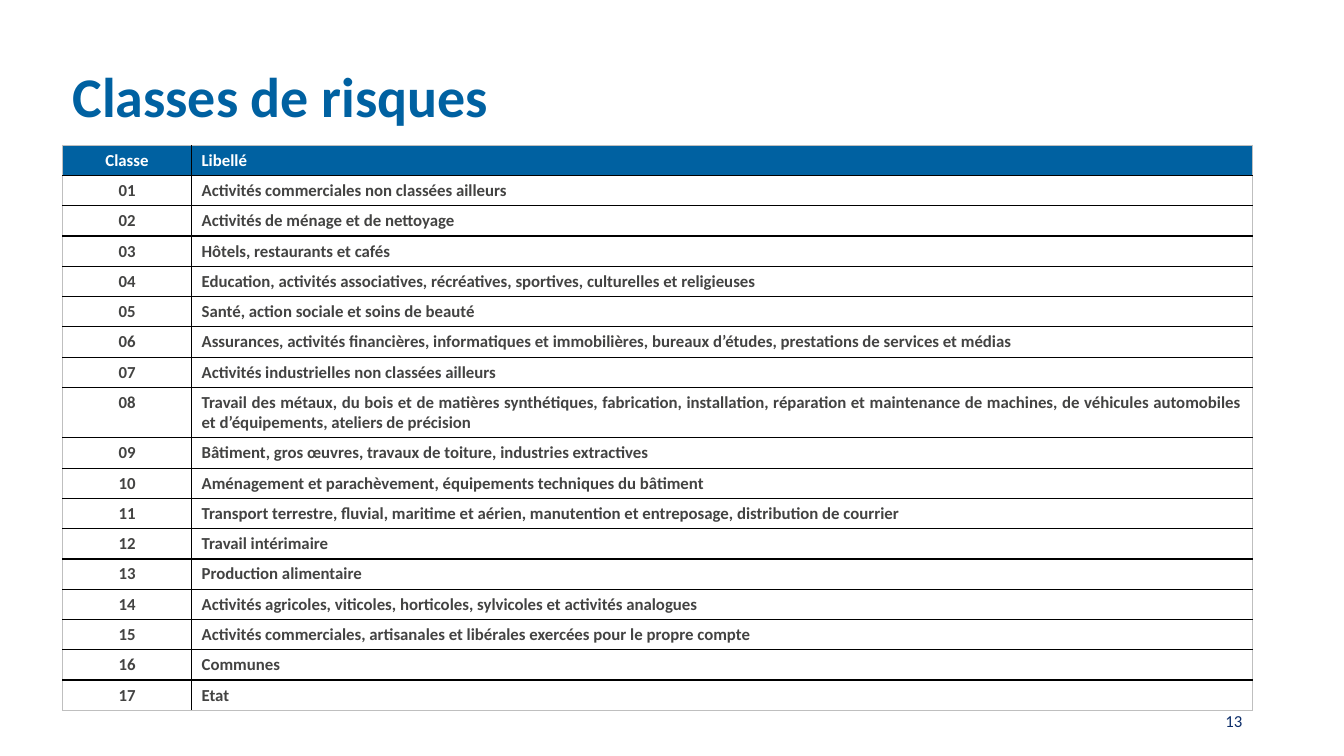
from lxml.etree import SubElement
from pptx import Presentation
from pptx.dml.color import RGBColor
from pptx.enum.text import MSO_ANCHOR, PP_ALIGN
from pptx.oxml.ns import qn
from pptx.util import Inches, Pt

BLUE, NAVY, DARK = "0061A1", "0C2D69", "434342"
WHITE, BLACK, GREY = "FFFFFF", "000000", "BFBFBF"

LEFT = 0.62
CLASS_WIDTH, LABEL_WIDTH = 1.28, 10.52
ROW_HEIGHT = 0.3
FIRST_JUSTIFIED = 8

RISK_LABELS = [
    "Activités commerciales non classées ailleurs",
    "Activités de ménage et de nettoyage",
    "Hôtels, restaurants et cafés",
    "Education, activités associatives, récréatives, sportives, culturelles et religieuses",
    "Santé, action sociale et soins de beauté",
    "Assurances, activités financières, informatiques et immobilières, "
    "bureaux d’études, prestations de services et médias",
    "Activités industrielles non classées ailleurs",
    "Travail des métaux, du bois et de matières synthétiques, fabrication, installation, "
    "réparation et maintenance de machines, de véhicules automobiles et d’équipements, "
    "ateliers de précision",
    "Bâtiment, gros œuvres, travaux de toiture, industries extractives",
    "Aménagement et parachèvement, équipements techniques du bâtiment",
    "Transport terrestre, fluvial, maritime et aérien, manutention et entreposage, "
    "distribution de courrier",
    "Travail intérimaire",
    "Production alimentaire",
    "Activités agricoles, viticoles, horticoles, sylvicoles et activités analogues",
    "Activités commerciales, artisanales et libérales exercées pour le propre compte",
    "Communes",
    "Etat",
]


def rgb(value):
    return RGBColor.from_string(value)


def write(frame, text, size=12, color=DARK, bold=True, align=PP_ALIGN.LEFT, spacing=None):
    frame.word_wrap = True
    paragraph = frame.paragraphs[0]
    paragraph.alignment = align
    if spacing:
        paragraph.line_spacing = spacing
    run = paragraph.add_run()
    run.text = text
    run.font.name = "Calibri"
    run.font.size = Pt(size)
    run.font.bold = bold
    run.font.color.rgb = rgb(color)


def add_text(slide, box, text, **style):
    frame = slide.shapes.add_textbox(*map(Inches, box)).text_frame
    frame.vertical_anchor = MSO_ANCHOR.MIDDLE
    write(frame, text, **style)


def set_borders(cell, outer_sides):
    """Black rules inside the table, fine grey ones around it."""
    properties = cell._tc.get_or_add_tcPr()
    for position, side in enumerate(("lnL", "lnR", "lnT", "lnB")):
        color, width = (GREY, 0.5) if side in outer_sides else (BLACK, 1)
        line = properties.makeelement(qn(f"a:{side}"), {"w": str(Pt(width))})
        fill = SubElement(line, qn("a:solidFill"))
        SubElement(fill, qn("a:srgbClr"), val=color)
        properties.insert(position, line)


def add_risk_table(slide, left, top):
    rows = [("Classe", "Libellé")]
    rows += [(f"{number:02}", label) for number, label in enumerate(RISK_LABELS, 1)]
    widths = (CLASS_WIDTH, LABEL_WIDTH)
    box = (left, top, sum(widths), ROW_HEIGHT * len(rows))
    table = slide.shapes.add_table(len(rows), 2, *map(Inches, box)).table
    table.horz_banding = False
    for column, width in zip(table.columns, widths):
        column.width = Inches(width)

    for row_index, row in enumerate(rows):
        table.rows[row_index].height = Inches(ROW_HEIGHT)
        is_header = row_index == 0
        label_align = PP_ALIGN.JUSTIFY if row_index >= FIRST_JUSTIFIED else PP_ALIGN.LEFT
        for column_index, text in enumerate(row):
            cell = table.cell(row_index, column_index)
            if is_header:
                cell.fill.solid()
                cell.fill.fore_color.rgb = rgb(BLUE)
            else:
                cell.fill.background()
            write(cell.text_frame, text, color=WHITE if is_header else DARK,
                  align=label_align if column_index else PP_ALIGN.CENTER)
            outer_sides = {"lnR" if column_index else "lnL"}
            if is_header:
                outer_sides.add("lnT")
            if row_index == len(rows) - 1:
                outer_sides.add("lnB")
            set_borders(cell, outer_sides)


def main():
    presentation = Presentation()
    presentation.slide_width = Inches(13.33)
    presentation.slide_height = Inches(7.5)
    slide = presentation.slides.add_slide(presentation.slide_layouts[6])

    # Page number, behind the table
    add_text(slide, (9.42, 6.95, 3, 0.4), "13", color=NAVY, bold=False, align=PP_ALIGN.RIGHT)
    # Title
    add_text(slide, (LEFT, 0.43, 11.5, 1.11), "Classes de risques",
             size=40, color=BLUE, spacing=0.9)
    # Risk classes
    add_risk_table(slide, LEFT, 1.44)

    presentation.save("out.pptx")


if __name__ == "__main__":
    main()
